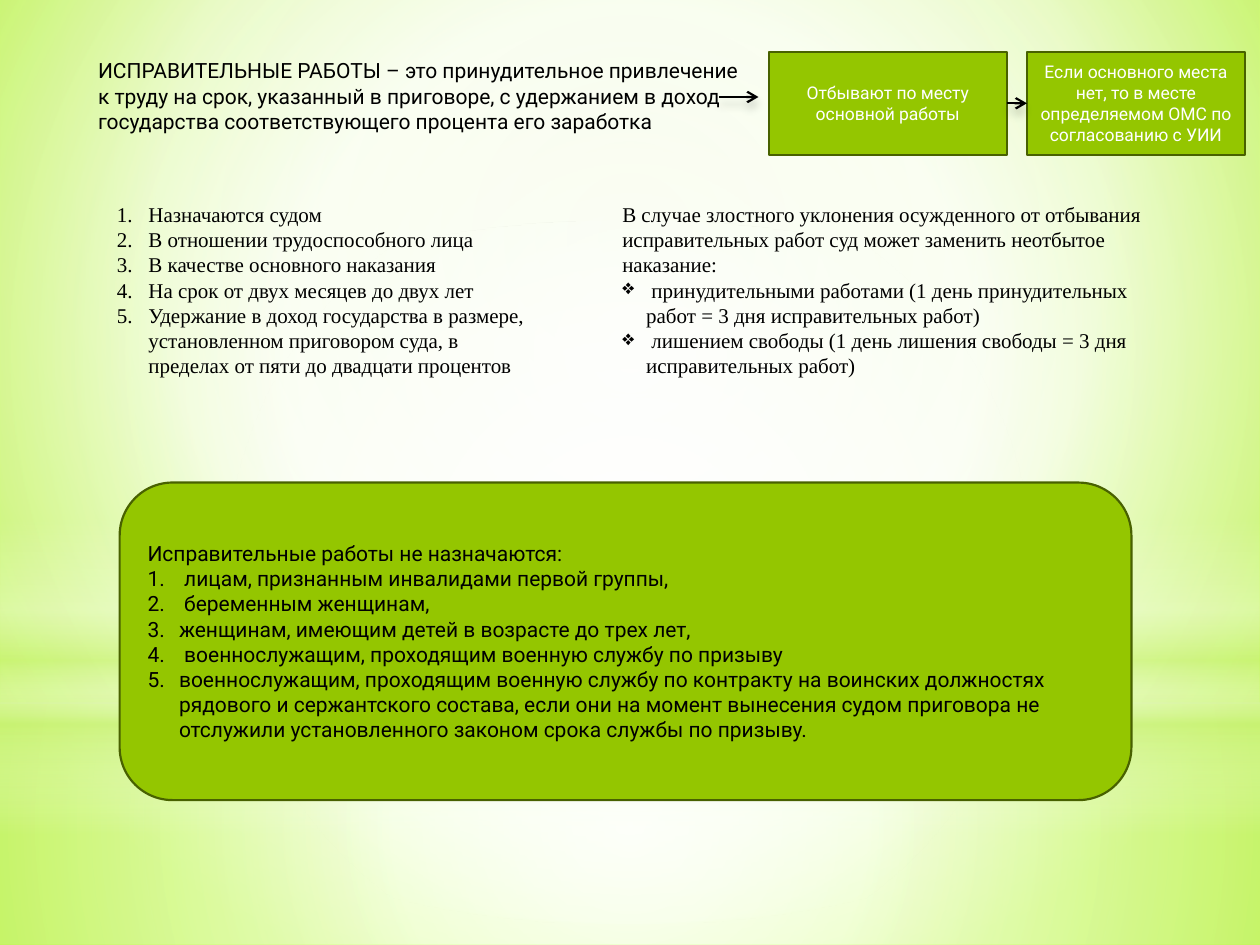
from lxml import etree
from pptx import Presentation
from pptx.dml.color import RGBColor
from pptx.enum.shapes import MSO_CONNECTOR, MSO_SHAPE
from pptx.enum.text import MSO_ANCHOR, MSO_AUTO_SIZE, PP_ALIGN
from pptx.oxml.ns import qn
from pptx.util import Inches, Pt

RECT, ROUND, OVAL = MSO_SHAPE.RECTANGLE, MSO_SHAPE.ROUNDED_RECTANGLE, MSO_SHAPE.OVAL
STRAIGHT = MSO_CONNECTOR.STRAIGHT
MIDDLE, TOP = MSO_ANCHOR.MIDDLE, MSO_ANCHOR.TOP
LEFT, CENTER = PP_ALIGN.LEFT, PP_ALIGN.CENTER
COLS, ROWS = 100, 75
SANS, SERIF = "Roboto", "Times New Roman"
C = {"green": "94C600", "edge": "486100", "lime": "CAF278", "white": "FFFFFF",
     "black": "000000", "bg_in": "EAFAC9", "bg_mid": "F7FFE7", "bg_out": "B7FF29"}
CENTRE = (50, 50, 50, 50)


def add(parent, tag, **attrs):
    return etree.SubElement(parent, qn(tag), {k: str(v) for k, v in attrs.items()})


class Deck:
    def __init__(self):
        self.prs = Presentation()
        self.prs.slide_width, self.prs.slide_height = Inches(10), Inches(7.5)
        self.slide = self.prs.slides.add_slide(self.prs.slide_layouts[6])
        self.shapes = self.slide.shapes

    def grid(self, *values):
        steps = (self.prs.slide_width / COLS, self.prs.slide_height / ROWS)
        return [round(v * steps[i % 2]) for i, v in enumerate(values)]

    def gradient(self, props, stops, focus=None):
        solid = props.find(qn("a:solidFill"))
        grad = etree.Element(qn("a:gradFill"), rotWithShape="1")
        props.replace(solid, grad)
        gs_list = add(grad, "a:gsLst")
        for pos, name, alpha in stops:
            clr = add(add(gs_list, "a:gs", pos=pos * 1000), "a:srgbClr", val=C[name])
            add(clr, "a:alpha", val=alpha * 1000)
        if focus:
            sides = {k: v * 1000 for k, v in zip("ltrb", focus)}
            add(add(grad, "a:path", path="circle"), "a:fillToRect", **sides)
        else:
            add(grad, "a:lin", ang=90 * 60000, scaled=0)

    def background(self, stops, focus):
        self.slide.background.fill.solid()
        self.gradient(self.slide.element.find(".//" + qn("p:bgPr")), stops, focus)

    def shape(self, kind, at):
        sp = self.shapes.add_shape(kind, *self.grid(*at))
        sp.shadow.inherit = False
        sp.fill.solid()
        return sp

    def glow(self, kind, at, stops, focus=None):
        sp = self.shape(kind, at)
        sp.line.fill.background()
        self.gradient(sp.element.spPr, stops, focus)

    def box(self, kind, at, paras, **style):
        sp = self.shape(kind, at)
        sp.fill.fore_color.rgb = RGBColor.from_string(C["green"])
        sp.line.color.rgb = RGBColor.from_string(C["edge"])
        sp.line.width = Pt(1.25)
        self.fill_text(sp.text_frame, paras, anchor=MIDDLE, **style)

    def text(self, at, paras, **style):
        tf = self.shapes.add_textbox(*self.grid(*at)).text_frame
        self.fill_text(tf, paras, **style)
        tf.auto_size = MSO_AUTO_SIZE.SHAPE_TO_FIT_TEXT

    def fill_text(self, tf, paras, font=SANS, size=12, color="black", align=LEFT,
                  anchor=TOP, bullet=None, indent=0.25, first=0):
        tf.word_wrap = True
        tf.vertical_anchor = anchor
        for i, text in enumerate(paras):
            p = tf.add_paragraph() if i else tf.paragraphs[0]
            p.alignment = align
            r = p.add_run()
            r.text = text
            r.font.name, r.font.size = font, Pt(size)
            r.font.color.rgb = RGBColor.from_string(C[color])
            if bullet and i >= first:
                self.bullet(p, bullet, indent)

    def bullet(self, p, mark, indent):
        pPr = p._p.get_or_add_pPr()
        pPr.set("marL", str(Inches(indent)))
        pPr.set("indent", str(-Inches(indent)))
        if mark == "1.":
            add(pPr, "a:buAutoNum", type="arabicPeriod")
        else:
            add(pPr, "a:buChar", char=mark)

    def arrow(self, *ends):
        cn = self.shapes.add_connector(STRAIGHT, *self.grid(*ends))
        cn.line.color.rgb = RGBColor.from_string(C["black"])
        cn.line.width = Pt(1.25)
        spPr = cn._element.spPr
        add(spPr.find(qn("a:ln")), "a:tailEnd", type="arrow")
        shadow = add(add(spPr, "a:effectLst"), "a:outerShdw", blurRad=Pt(5),
                     dist=Pt(4), dir=90 * 60000, rotWithShape=0)
        add(add(shadow, "a:srgbClr", val=C["black"]), "a:alpha", val=20000)


def main():
    d = Deck()
    d.background([(0, "bg_in", 100), (60, "bg_mid", 100), (100, "bg_out", 100)],
                 (20, 10, 20, 60))
    d.glow(RECT, (0, 55.8, COLS, 19.2),
           [(0, "white", 91), (37, "white", 76), (100, "lime", 79)], CENTRE)
    d.glow(RECT, (0, 0, COLS, 55.8),
           [(0, "white", 89), (48, "white", 62), (100, "lime", 79)], CENTRE)
    d.glow(RECT, (0, 41.2, COLS, 25),
           [(0, "white", 0), (29, "white", 30), (45, "lime", 40),
            (55, "white", 26), (65, "lime", 60), (100, "white", 0)])
    d.glow(OVAL, (0, 17.5, COLS, 55.8), [(0, "white", 100), (56, "white", 0)], CENTRE)

    d.text((6.8, 4.1, 53.4, 7.1), [
        "ИСПРАВИТЕЛЬНЫЕ РАБОТЫ – это принудительное привлечение к труду на срок, "
        "указанный в приговоре, с удержанием в доход государства соответствующего "
        "процента его заработка"])
    d.text((8.3, 15.5, 35.4, 15.1), [
        "Назначаются судом",
        "В отношении трудоспособного лица",
        "В качестве основного наказания",
        "На срок от двух месяцев до двух лет",
        "Удержание в доход государства в размере, установленном приговором суда, "
        "в пределах от пяти до двадцати процентов"], font=SERIF, bullet="1.")
    d.text((48.4, 15.5, 46.5, 15.1), [
        "В случае злостного уклонения осужденного от отбывания исправительных работ "
        "суд может заменить неотбытое наказание:",
        " принудительными работами (1 день принудительных работ = 3 дня "
        "исправительных работ)",
        " лишением свободы (1 день лишения свободы = 3 дня исправительных работ)"],
        font=SERIF, bullet="❖", indent=0.19, first=1)
    d.box(ROUND, (9.5, 38.3, 80.3, 25.2), [
        "Исправительные работы не назначаются:",
        " лицам, признанным инвалидами первой группы,",
        " беременным женщинам,",
        "женщинам, имеющим детей в возрасте до трех лет,",
        " военнослужащим, проходящим военную службу по призыву",
        "военнослужащим, проходящим военную службу по контракту на воинских "
        "должностях рядового и сержантского состава, если они на момент вынесения "
        "судом приговора не отслужили установленного законом срока службы по призыву."],
        bullet="1.", first=1)

    for x, w, text in (
            (61, 18.9, "Отбывают по месту основной работы"),
            (81.5, 17.3, "Если основного места нет, то в месте определяемом ОМС "
                         "по согласованию с УИИ")):
        d.box(RECT, (x, 4.1, w, 8.2), [text], size=10, color="white", align=CENTER)
    d.arrow(57.1, 7.7, 60.2, 7.7)
    d.arrow(79.9, 8.2, 81.5, 8.2)
    d.prs.save("out.pptx")


if __name__ == "__main__":
    main()
